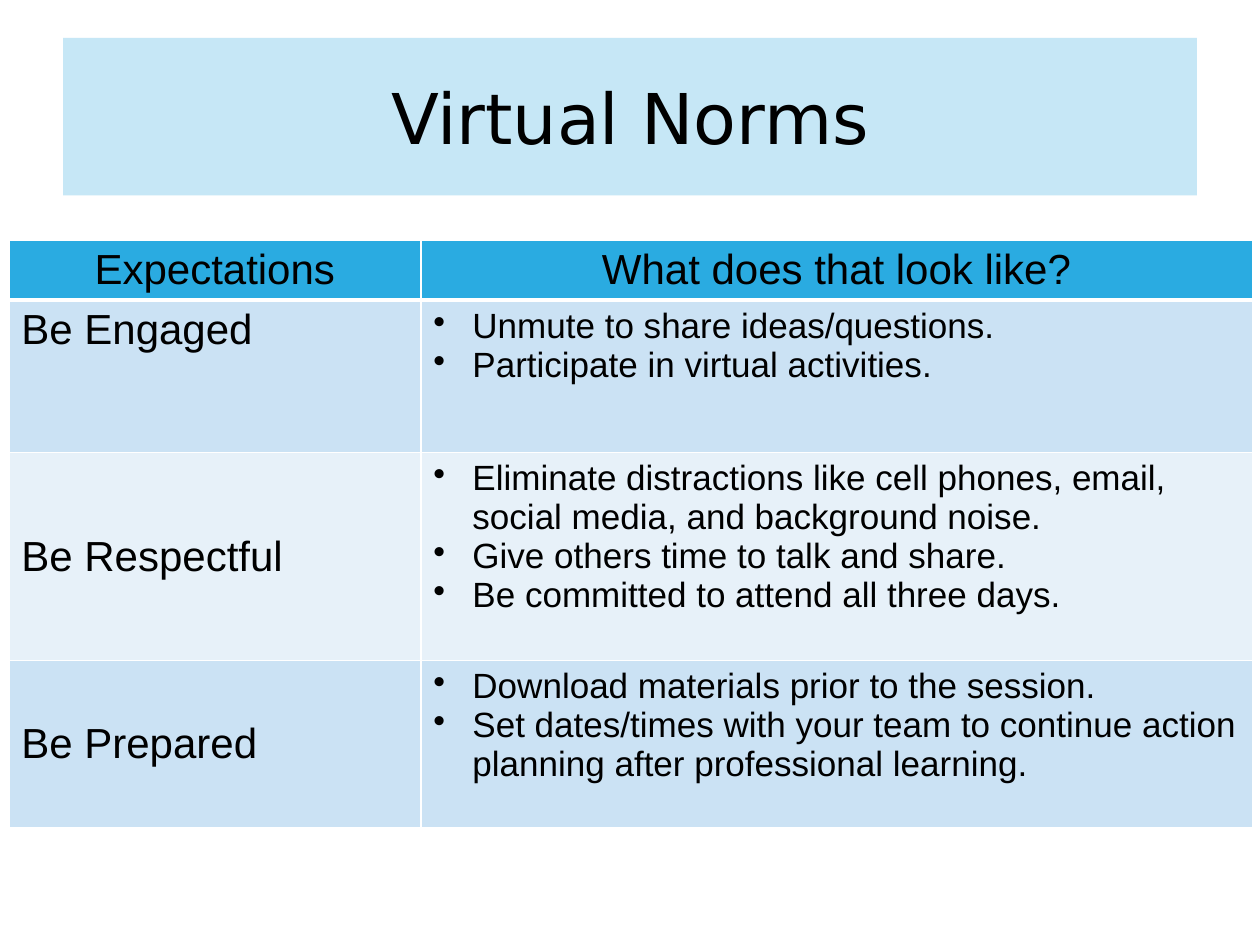
from lxml.etree import SubElement
from pptx import Presentation
from pptx.dml.color import RGBColor
from pptx.enum.text import MSO_ANCHOR, PP_ALIGN
from pptx.oxml.ns import qn
from pptx.util import Inches, Pt

BLACK, WHITE = "000000", "FFFFFF"
HEADER_BLUE = "2AABE1"
BANDS = ["CBE2F4", "E7F1F9"]
COLUMN_WIDTHS = [3.27, 6.6]
HEADER_HEIGHT = 0.47
HEADINGS = ["Expectations", "What does that look like?"]
NORMS = [  # expectation, anchor, row height, examples
    ("Be Engaged", MSO_ANCHOR.TOP, 1.21, [
        "Unmute to share ideas/questions.",
        "Participate in virtual activities."]),
    ("Be Respectful", MSO_ANCHOR.MIDDLE, 1.65, [
        "Eliminate distractions like cell phones, email, social media, and background noise.",
        "Give others time to talk and share.",
        "Be committed to attend all three days."]),
    ("Be Prepared", MSO_ANCHOR.MIDDLE, 1.33, [
        "Download materials prior to the session.",
        "Set dates/times with your team to continue action planning after professional learning."]),
]


def paint(color_format, color):
    color_format.rgb = RGBColor.from_string(color)


def fill_solid(item, color):
    item.fill.solid()
    paint(item.fill.fore_color, color)


def style_para(para, size, font="Arial", align=PP_ALIGN.LEFT):
    para.alignment = align
    para.font.name = font
    para.font.size = Pt(size)
    para.font.bold = False
    paint(para.font.color, BLACK)


def add_bullet(para):
    props = para._p.get_or_add_pPr()
    props.set("marL", str(Inches(0.31)))
    props.set("indent", str(-Inches(0.31)))
    # Bullet elements come before the default run properties.
    bullet = SubElement(props, qn("a:buChar"), char="•")
    props.insert(0, bullet)


def add_borders(cell, bottom_width):
    props = cell._tc.get_or_add_tcPr()
    for side, width in (("L", 1), ("R", 1), ("T", 1), ("B", bottom_width)):
        line = SubElement(props, qn(f"a:ln{side}"), w=str(Pt(width)))
        SubElement(SubElement(line, qn("a:solidFill")), qn("a:srgbClr"), val=WHITE)


def write_cell(cell, lines, color, size, align=PP_ALIGN.LEFT,
               anchor=MSO_ANCHOR.TOP, bulleted=False, bottom_width=1):
    add_borders(cell, bottom_width)
    fill_solid(cell, color)
    cell.vertical_anchor = anchor
    cell.text_frame.text = "\n".join(lines)
    for para in cell.text_frame.paragraphs:
        style_para(para, size, align=align)
        if bulleted:
            add_bullet(para)


def place_title(page, left, top, width, height):
    title = page.shapes.title
    title.left, title.top = Inches(left), Inches(top)
    title.width, title.height = Inches(width), Inches(height)
    fill_solid(title, "A9DCF2")
    tint = title._element.spPr.find(qn("a:solidFill")).find(qn("a:srgbClr"))
    SubElement(tint, qn("a:alpha"), val="66000")
    title.text_frame.text = "Virtual Norms"
    title.text_frame.vertical_anchor = MSO_ANCHOR.MIDDLE
    style_para(title.text_frame.paragraphs[0], 40, "DejaVu Sans", PP_ALIGN.CENTER)


def add_norms_table(page, left, top):
    heights = [HEADER_HEIGHT] + [norm[2] for norm in NORMS]
    table = page.shapes.add_table(
        len(heights), len(COLUMN_WIDTHS), Inches(left), Inches(top),
        Inches(sum(COLUMN_WIDTHS)), Inches(sum(heights))).table
    for column, width in zip(table.columns, COLUMN_WIDTHS):
        column.width = Inches(width)
    for row, height in zip(table.rows, heights):
        row.height = Inches(height)
    for index, heading in enumerate(HEADINGS):
        write_cell(table.cell(0, index), [heading], HEADER_BLUE, 24,
                   align=PP_ALIGN.CENTER, bottom_width=3)
    for index, (expectation, anchor, _, examples) in enumerate(NORMS):
        band = BANDS[index % 2]
        write_cell(table.cell(index + 1, 0), [expectation], band, 24, anchor=anchor)
        write_cell(table.cell(index + 1, 1), examples, band, 20, bulleted=True)


def main():
    deck = Presentation()
    deck.slide_width, deck.slide_height = Inches(10), Inches(7.5)
    page = deck.slides.add_slide(deck.slide_layouts.get_by_name("Title Only"))
    place_title(page, 0.5, 0.3, 9, 1.25)
    add_norms_table(page, 0.07, 1.91)
    deck.save("out.pptx")


if __name__ == "__main__":
    main()
